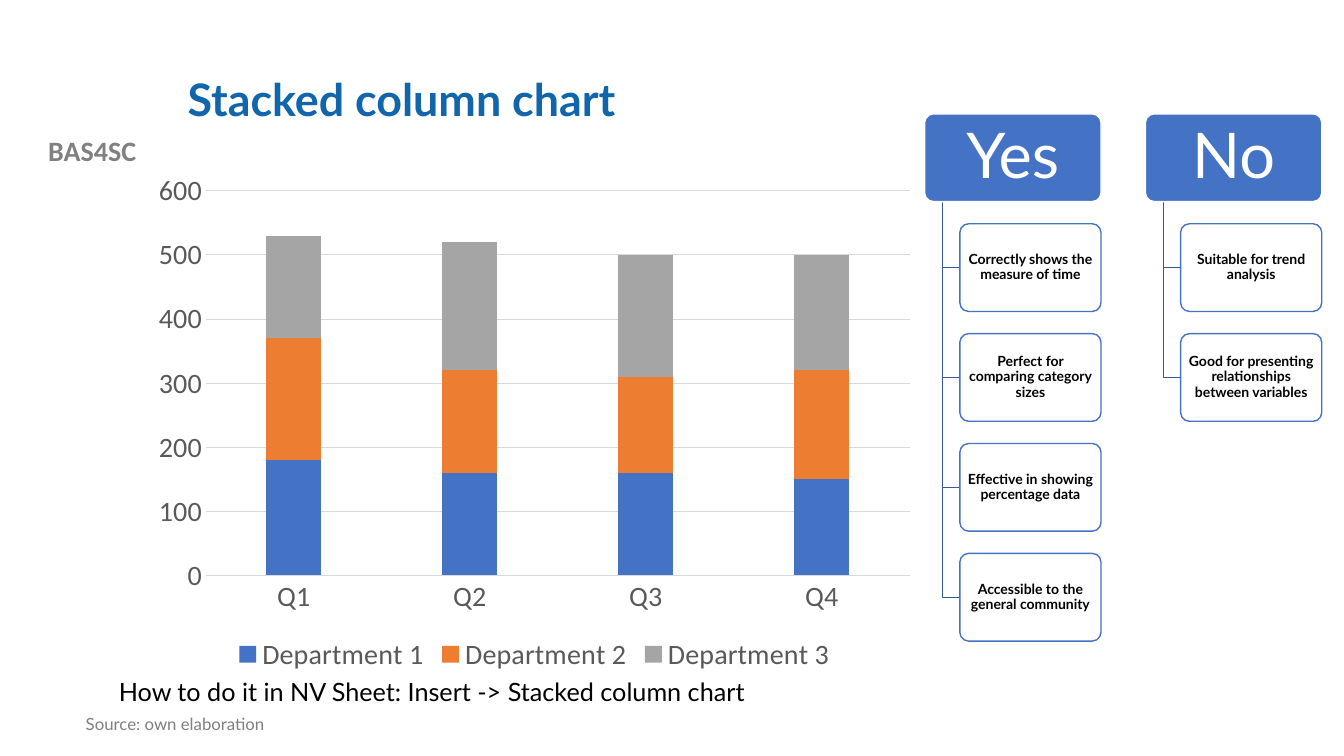
from lxml import etree
from pptx import Presentation
from pptx import util as u
from pptx.chart import data
from pptx.dml import color
from pptx.enum import chart as ch, shapes, text
from pptx.oxml import ns

Inches, Pt = u.Inches, u.Pt
ALIGN, ANCHOR = text.PP_ALIGN, text.MSO_ANCHOR


def rgb(value):
    return color.RGBColor.from_string(value)


def write(tf, words, size=18, fill="000000", bold=False, font="Lato", align=ALIGN.LEFT,
          anchor=ANCHOR.TOP, spacing=None, margins=(0.1, 0.05)):
    tf.word_wrap = True
    tf.auto_size = text.MSO_AUTO_SIZE.NONE
    tf.vertical_anchor = anchor
    tf.margin_left = tf.margin_right = Inches(margins[0])
    tf.margin_top = tf.margin_bottom = Inches(margins[1])
    p = tf.paragraphs[0]
    p.alignment = align
    p.line_spacing = spacing
    p.space_before = Pt(0)
    r = p.add_run()
    r.text = words
    r.font.name = font
    r.font.size = Pt(size)
    r.font.bold = bold
    r.font.color.rgb = rgb(fill)


prs = Presentation()
prs.slide_width, prs.slide_height = Inches(13.33), Inches(7.5)
s = prs.slides.add_slide(prs.slide_layouts[1])

title, source = s.shapes.title, s.placeholders[1]
title.left, title.top, title.width, title.height = map(Inches, (1.76, 0.4, 10.66, 1.22))
write(title.text_frame, "Stacked column chart", size=32, fill="1065AB", bold=True,
      anchor=ANCHOR.MIDDLE, spacing=0.9)

source.left, source.top, source.width, source.height = map(Inches, (0.75, 7.05, 5.01, 0.37))
pPr = source.text_frame.paragraphs[0]._p.get_or_add_pPr()
pPr.set("marL", "0")
pPr.set("indent", "0")
etree.SubElement(pPr, ns.qn("a:buNone"))
write(source.text_frame, "Source: own elaboration", size=12, fill="7F7F7F", spacing=0.9)

sp = s.shapes.add_textbox(Inches(0), Inches(1.28), Inches(1.83), Inches(0.44))
write(sp.text_frame, "BAS4SC", size=20, fill="808080", bold=True, font="Calibri", align=ALIGN.CENTER)

cd = data.CategoryChartData()
cd.categories = ["Q1", "Q2", "Q3", "Q4"]
cd.add_series("Department 1", (180, 160, 160, 150))
cd.add_series("Department 2", (190, 160, 150, 170))
cd.add_series("Department 3", (160, 200, 190, 180))
chart = s.shapes.add_chart(ch.XL_CHART_TYPE.COLUMN_STACKED, Inches(1.42), Inches(1.62),
                           Inches(7.76), Inches(5.1), cd).chart
chart.has_title = False
chart.has_legend = True
chart.legend.position = ch.XL_LEGEND_POSITION.BOTTOM
chart.legend.include_in_layout = False
cat, val = chart.category_axis, chart.value_axis
for font in (chart.font, chart.legend.font, cat.tick_labels.font, val.tick_labels.font):
    font.name = "Calibri"
    font.size = Pt(20)
    font.color.rgb = rgb("595959")
for axis in (cat, val):
    axis.major_tick_mark = axis.minor_tick_mark = ch.XL_TICK_MARK.NONE
val.minimum_scale, val.maximum_scale, val.major_unit = 0, 600, 100
val.has_major_gridlines = True
val.format.line.fill.background()
for line in (cat.format.line, val.major_gridlines.format.line):
    line.color.rgb = rgb("D9D9D9")
    line.width = Pt(0.75)
plot = chart.plots[0]
plot.gap_width, plot.overlap, plot.vary_by_categories = 219, 100, False
for series, fill in zip(plot.series, ("4472C4", "ED7D31", "A5A5A5")):
    series.format.fill.solid()
    series.format.fill.fore_color.rgb = rgb(fill)

columns = {
    "Yes": ["Correctly shows the measure of time", "Perfect for comparing category sizes",
            "Effective in showing percentage data", "Accessible to the general community"],
    "No": ["Suitable for trend analysis", "Good for presenting relationships between variables"],
}
head_top, box_h, step = 1.13, 0.87, 1.09
for i, (heading, points) in enumerate(columns.items()):
    left = 9.17 + 2.19 * i
    spine, card_left = left + 0.18, left + 0.35
    boxes = [(heading, left, head_top, 1.75, "4472C4", "FFFFFF",
              dict(size=45, fill="FFFFFF", margins=(0.09, 0.06)))]
    for j, point in enumerate(points, 1):
        top = head_top + step * j
        middle = top + box_h / 2
        fb = s.shapes.build_freeform(Inches(spine), Inches(head_top + box_h))
        fb.add_line_segments([(Inches(spine), Inches(middle)),
                              (Inches(card_left), Inches(middle))], close=False)
        sp = fb.convert_to_shape()
        sp.shadow.inherit = False
        sp.fill.background()
        sp.line.color.rgb = rgb("365B9D")
        sp.line.width = Pt(1)
        boxes.append((point, card_left, top, 1.4, "FFFFFF", "4472C4",
                      dict(size=10, bold=True, margins=(0.02, 0.01))))
    for words, x, y, width, fill, outline, style in boxes:
        sp = s.shapes.add_shape(shapes.MSO_SHAPE.ROUNDED_RECTANGLE, Inches(x), Inches(y),
                                Inches(width), Inches(box_h))
        sp.adjustments[0] = 0.1
        sp.shadow.inherit = False
        sp.fill.solid()
        sp.fill.fore_color.rgb = rgb(fill)
        sp.line.color.rgb = rgb(outline)
        sp.line.width = Pt(1)
        write(sp.text_frame, words, align=ALIGN.CENTER, anchor=ANCHOR.MIDDLE, spacing=0.9, **style)

sp = s.shapes.add_textbox(Inches(1.08), Inches(6.66), Inches(7.88), Inches(0.42))
write(sp.text_frame, "How to do it in NV Sheet: Insert -> Stacked column chart")

prs.save("out.pptx")
